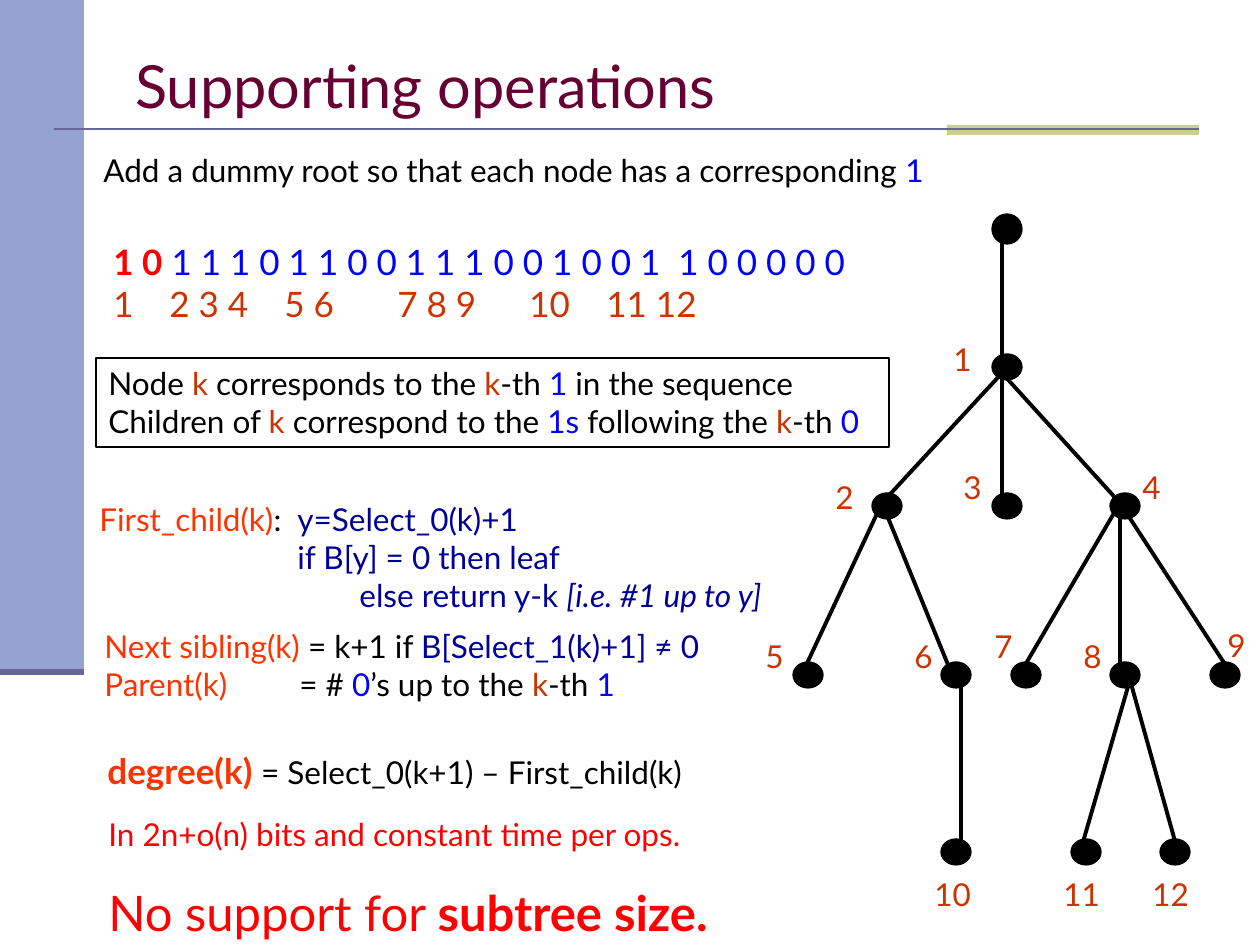
from dataclasses import dataclass
from typing import Optional

from pptx import Presentation
from pptx.dml.color import RGBColor
from pptx.enum.shapes import MSO_CONNECTOR as Link, MSO_SHAPE as Kind
from pptx.enum.text import MSO_ANCHOR as Anchor, PP_ALIGN as Align
from pptx.oxml.ns import qn
from pptx.util import Emu, Pt
from lxml.etree import SubElement

SCALE = 914400 / 126  # EMU in one px
FONT = "Lato"
BLACK = RGBColor(0x00, 0x00, 0x00)
RED = RGBColor(0xFF, 0x00, 0x00)
BLUE = RGBColor(0x00, 0x00, 0xFF)
NAVY = RGBColor(0x00, 0x00, 0x99)
RUST = RGBColor(0xCC, 0x33, 0x00)
ORANGE = RGBColor(0xFF, 0x33, 0x00)
PLUM = RGBColor(0x66, 0x00, 0x33)
SKY = RGBColor(0x95, 0xA3, 0xD1)
SAND = RGBColor(0xCC, 0xCC, 0x99)
SLATE = RGBColor(0x66, 0x66, 0x99)

Box = tuple[int, int, int, int]
Point = tuple[int, int]


@dataclass(frozen=True)
class Run:
    text: str
    color: RGBColor = BLACK
    size: Optional[int] = None
    bold: bool = False
    italic: bool = False


@dataclass(frozen=True)
class Node:
    x: int
    y: int
    parent: Optional[int] = None
    label: Optional[Point] = None
    enter: Point = (10, 10)  # where the edge from the parent ends
    leave: Point = (10, 10)  # where edges to the children start
    height: int = 26


def px(num: int) -> Emu:
    return Emu(round(num * SCALE))


def add_shape(slide, kind, box: Box, fill=None, line=None):
    shape = slide.shapes.add_shape(kind, *map(px, box))
    shape.shadow.inherit = False
    if fill is None:
        shape.fill.background()
    else:
        shape.fill.solid()
        shape.fill.fore_color.rgb = fill
    if line is None:
        shape.line.fill.background()
    else:
        shape.line.color.rgb = line
        shape.line.width = Pt(0.75)
    return shape


def add_line(slide, start: Point, end: Point, color=BLACK, width=2.25):
    line = slide.shapes.add_connector(Link.STRAIGHT, *map(px, start + end))
    line.line.color.rgb = color
    line.line.width = Pt(width)
    SubElement(line._element.spPr, qn("a:effectLst"))


def add_text(slide, box: Box, paras, *, size=18, anchor=Anchor.TOP,
             tabs=(), spacing=None, frame=None):
    if frame is None:
        shape = slide.shapes.add_textbox(*map(px, box))
    else:
        shape = add_shape(slide, Kind.RECTANGLE, box, line=frame)
    body = shape.text_frame
    body.word_wrap = True
    body.vertical_anchor = anchor
    for num, runs in enumerate(paras):
        para = body.add_paragraph() if num else body.paragraphs[0]
        para.alignment = Align.LEFT
        if spacing and spacing[num]:
            para.line_spacing = spacing[num]
        if tabs:
            stops = SubElement(para._p.get_or_add_pPr(), qn("a:tabLst"))
            for stop in tabs:
                SubElement(stops, qn("a:tab"), pos=str(px(stop)), algn="l")
        for item in runs:
            run = para.add_run()
            run.text = item.text
            font = run.font
            font.name = FONT
            font.size = Pt(item.size or size)
            font.bold, font.italic = item.bold, item.italic
            font.color.rgb = item.color


# Tree: the dummy root has number 0
NODES = [
    Node(992, 214, leave=(10, 20), height=30),
    Node(992, 354, 0, (941, 334), leave=(10, 19)),
    Node(872, 493, 1, (823, 472)),
    Node(992, 493, 1, (951, 462)),
    Node(1110, 493, 1, (1130, 462)),
    Node(793, 662, 2, (753, 631)),
    Node(941, 662, 2, (902, 631), leave=(20, 10)),
    Node(1011, 662, 4, (982, 621)),
    Node(1110, 662, 4, (1071, 631), leave=(20, 18)),
    Node(1210, 662, 4, (1215, 620), enter=(20, 10)),
    Node(941, 839, 6, (922, 869), enter=(20, 10)),
    Node(1071, 839, 8, (1051, 869)),
    Node(1160, 839, 8, (1140, 869), enter=(20, 20)),
]


def add_tree(slide):
    for num, node in enumerate(NODES):
        add_shape(slide, Kind.OVAL, (node.x, node.y, 30, node.height),
                  BLACK, BLACK)
        if node.parent is not None:
            top = NODES[node.parent]
            add_line(slide, (top.x + top.leave[0], top.y + top.leave[1]),
                     (node.x + node.enter[0], node.y + node.enter[1]))
        if node.label:
            wide = 45 if num < 10 else 66
            add_text(slide, (*node.label, wide, 50), [[Run(str(num), RUST)]])


def main():
    deck = Presentation()
    deck.slide_width, deck.slide_height = px(1260), px(945)
    slide = deck.slides.add_slide(deck.slide_layouts[6])

    # Side band and title rule
    add_shape(slide, Kind.RECTANGLE, (0, 0, 84, 672), SKY)
    add_shape(slide, Kind.RECTANGLE, (947, 125, 252, 10), SAND)
    add_line(slide, (54, 129), (1199, 129), SLATE, 1.5)
    add_line(slide, (0, 672), (84, 672), SLATE, 3.5)

    # Title and opening line
    add_text(slide, (123, 35, 1071, 100), [[Run("Supporting operations", PLUM)]],
             size=34, anchor=Anchor.MIDDLE)
    add_text(slide, (91, 145, 1036, 50), [
        [Run("Add a dummy root so that each node has a corresponding "),
         Run("1", BLUE)]])

    # Bit sequence with node numbers below
    add_text(slide, (101, 234, 788, 97), [
        [Run("1 0", RED, bold=True),
         Run(" 1 1 1 0 1 1 0 0 1 1 1 0 0 1 0 0 1  1 0 0 0 0 0", BLUE)],
        [Run("1\t2 3 4\t5 6\t7 8 9\t10\t11 12", RUST)],
    ], size=20, tabs=(56, 171, 284, 416, 493))

    add_tree(slide)

    # Operations
    add_text(slide, (92, 621, 679, 89), [
        [Run("Next sibling(k) ", ORANGE), Run("= k+1 if "),
         Run("B[Select_1(k)+1] ≠ 0", NAVY)],
        [Run("Parent(k)", ORANGE), Run("\t= # "), Run("0", BLUE),
         Run("’s up to the "), Run("k", RUST), Run("-th "), Run("1", BLUE)],
    ], tabs=(195,))
    add_text(slide, (87, 494, 750, 127), [
        [Run("First_child(k)", ORANGE), Run(":\t"),
         Run("y=Select_0(k)+1", NAVY)],
        [Run("\tif B[y] = 0 then leaf", NAVY)],
        [Run("\t\telse return y-k ", NAVY),
         Run("[i.e. #1 up to y]", NAVY, italic=True)],
    ], tabs=(198, 260))
    add_text(slide, (95, 743, 664, 55), [
        [Run("degree(k) ", ORANGE, 20, bold=True),
         Run("= Select_0(k+1) – First_child(k)")]])

    # Framed rule
    add_text(slide, (96, 358, 793, 89), [
        [Run("Node "), Run("k", RUST), Run(" corresponds to the "),
         Run("k", RUST), Run("-th "), Run("1", BLUE),
         Run(" in the sequence")],
        [Run("Children of "), Run("k ", RUST), Run("correspond to the "),
         Run("1s ", BLUE), Run("following the "), Run("k", RUST),
         Run("-th "), Run("0", BLUE)],
    ], frame=BLACK)

    # Closing remarks
    add_text(slide, (96, 809, 723, 136), [
        [Run("In 2n+o(n) bits and constant time per ops.", RED)],
        [Run("No support for ", RED, 28),
         Run("subtree size.", RED, 28, bold=True)],
    ], spacing=(None, 1.5))

    deck.save("out.pptx")


if __name__ == "__main__":
    main()
